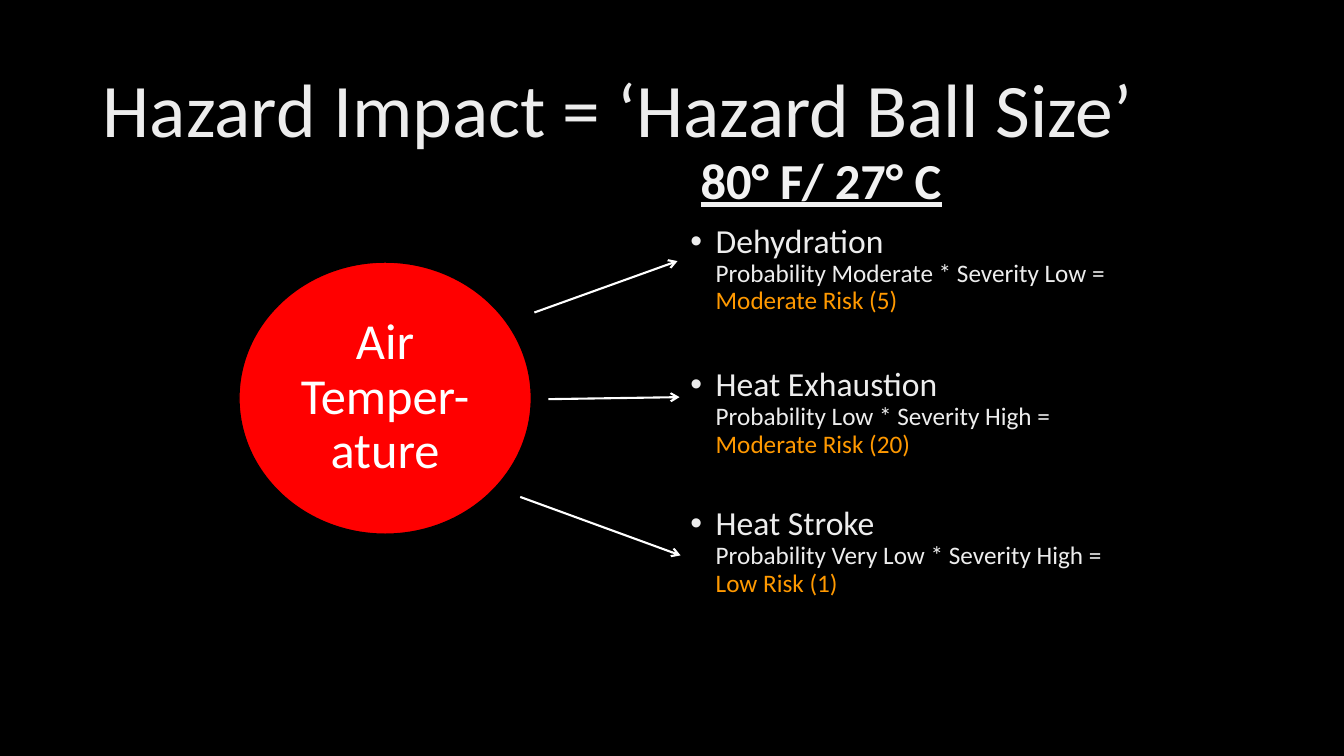
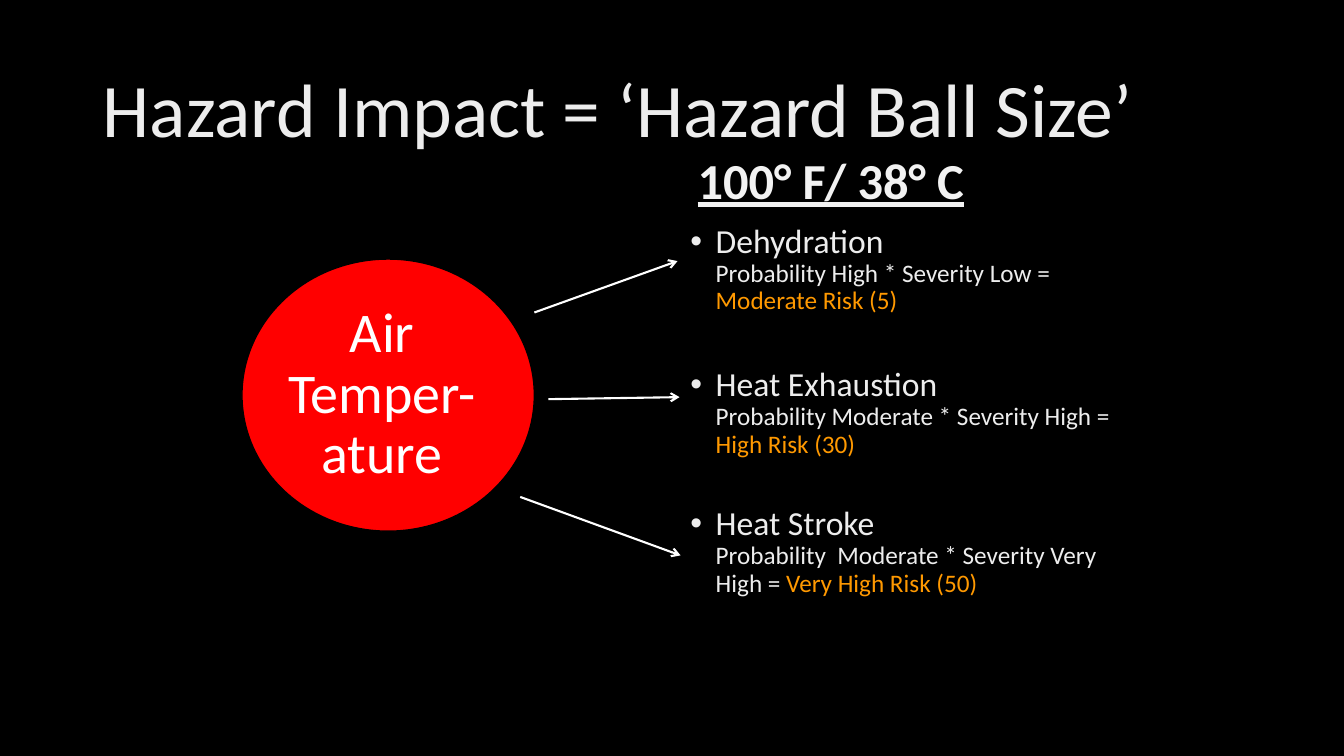
from lxml import etree
from pptx import Presentation
from pptx.dml.color import RGBColor
from pptx.enum import shapes, text
from pptx.oxml import ns
from pptx.util import Inches, Pt

FONT = "Calibri"
BLACK = RGBColor(0x00, 0x00, 0x00)
WHITE = RGBColor(0xFF, 0xFF, 0xFF)
SILVER = RGBColor(0xED, 0xED, 0xED)
PALE = RGBColor(0xF2, 0xF2, 0xF2)
RED = RGBColor(0xFF, 0x00, 0x00)
ORANGE = RGBColor(0xFF, 0x99, 0x00)

TITLE = "Hazard Impact = ‘Hazard Ball Size’"
HAZARDS = ("Dehydration", "Heat Exhaustion", "Heat Stroke")
HAZARD_GAPS = (0, 37.5, 34.5)
ARROWS = (
    ((5.3, 3.1), (6.72, 2.59)),
    ((5.44, 3.96), (6.74, 3.94)),
    ((5.16, 4.93), (6.75, 5.51)),
)
BALL_SIZE = (2.9, 2.7)
BALL_INSET = 0.07

SCENARIOS = (
    {
        "temperature": "80° F/ 27° C",
        "temperature_left": 6.85,
        "ball_at": (2.37, 2.6),
        "ball_text_size": 36,
        "ball_text_shift": 0,
        "risks": (
            ("Probability Moderate * Severity Low = ", "Moderate Risk (5)"),
            ("Probability Low * Severity High = ", "Moderate Risk (20)"),
            ("Probability Very Low * Severity High = ", "Low Risk (1)"),
        ),
    },
    {
        "temperature": "100° F/ 38° C",
        "temperature_left": 6.82,
        "ball_at": (2.4, 2.57),
        "ball_text_size": 40,
        "ball_text_shift": 0.06,
        "risks": (
            ("Probability High * Severity Low = ", "Moderate Risk (5)"),
            ("Probability Moderate * Severity High = ", "High Risk (30)"),
            ("Probability  Moderate * Severity Very High = ", "Very High Risk (50)"),
        ),
    },
)


def style(run, size, color):
    """Give a run the deck font, a size and a colour."""
    run.font.name = FONT
    run.font.size = Pt(size)
    run.font.color.rgb = color


def add_run(paragraph, words, size, color):
    """Append a styled run to a paragraph."""
    run = paragraph.add_run()
    run.text = words
    style(run, size, color)


def add_text_box(slide, left, top, width, height):
    """Add a wrapping text box and return its text frame."""
    frame = slide.shapes.add_textbox(*map(Inches, (left, top, width, height))).text_frame
    frame.word_wrap = True
    return frame


def set_title(slide):
    """Place and format the slide title."""
    title = slide.shapes.title
    title.left, title.top = Inches(0.92), Inches(0.4)
    title.width, title.height = Inches(11.5), Inches(1.45)
    frame = title.text_frame
    frame.text = TITLE
    frame.vertical_anchor = text.MSO_ANCHOR.MIDDLE
    heading = frame.paragraphs[0]
    heading.alignment = text.PP_ALIGN.LEFT
    heading.line_spacing = 0.9
    style(heading.runs[0], 54, SILVER)


def set_bullet(paragraph):
    """Give a paragraph a round bullet with a hanging indent."""
    properties = paragraph._p.get_or_add_pPr()
    properties.set("marL", str(Inches(0.25)))
    properties.set("indent", str(-Inches(0.25)))
    etree.SubElement(properties, ns.qn("a:buFont")).set("typeface", "Arial")
    etree.SubElement(properties, ns.qn("a:buChar")).set("char", "•")


def add_risks(slide, risks):
    """List each hazard with its rating and resulting risk."""
    frame = add_text_box(slide, 6.75, 2.18, 4.51, 4.87)
    for index, (hazard, gap, (rating, risk)) in enumerate(zip(HAZARDS, HAZARD_GAPS, risks)):
        entry = frame.add_paragraph() if index else frame.paragraphs[0]
        set_bullet(entry)
        entry.line_spacing = 0.9
        entry.space_before = Pt(gap)
        add_run(entry, hazard, 24, SILVER)
        entry.add_line_break()
        add_run(entry, rating, 18, SILVER)
        add_run(entry, risk, 18, ORANGE)


def add_arrow(slide, start, end):
    """Draw a white arrow between two points."""
    arrow = slide.shapes.add_connector(
        shapes.MSO_CONNECTOR.STRAIGHT, *map(Inches, (*start, *end)))
    arrow.line.color.rgb = WHITE
    arrow.line.width = Pt(1.5)
    outline = arrow.line._get_or_add_ln()
    etree.SubElement(outline, ns.qn("a:tailEnd")).set("type", "arrow")
    etree.SubElement(arrow._element.spPr, ns.qn("a:effectLst"))


def add_temperature(slide, temperature, left):
    """Write the underlined temperature heading."""
    heading = add_text_box(slide, left, 1.43, 4.82, 0.71).paragraphs[0]
    add_run(heading, temperature, 36, PALE)
    heading.runs[0].font.bold = True
    heading.runs[0].font.underline = True


def add_ball(slide, position, text_size, text_shift):
    """Draw the labelled hazard ball, its label shifted left as given."""
    ball = slide.shapes.add_shape(
        shapes.MSO_SHAPE.OVAL, *map(Inches, (*position, *BALL_SIZE)))
    ball.shadow.inherit = False
    ball.fill.solid()
    ball.fill.fore_color.rgb = RED
    ball.line.color.rgb = BLACK
    ball.line.width = Pt(1)
    frame = ball.text_frame
    frame.word_wrap = True
    frame.vertical_anchor = text.MSO_ANCHOR.MIDDLE
    frame.margin_top = frame.margin_bottom = Inches(BALL_INSET)
    frame.margin_left = Inches(BALL_INSET - text_shift)
    frame.margin_right = Inches(BALL_INSET + text_shift)
    label = frame.paragraphs[0]
    label.alignment = text.PP_ALIGN.CENTER
    label.line_spacing = 0.9
    add_run(label, "Air Temper-ature", text_size, WHITE)


def add_scenario(deck, scenario):
    """Build the slide for one air temperature."""
    slide = deck.slides.add_slide(deck.slide_layouts.get_by_name("Title Only"))
    set_title(slide)
    add_risks(slide, scenario["risks"])
    for start, end in ARROWS:
        add_arrow(slide, start, end)
    add_temperature(slide, scenario["temperature"], scenario["temperature_left"])
    add_ball(slide, scenario["ball_at"], scenario["ball_text_size"],
             scenario["ball_text_shift"])


def main():
    """Build and save the deck."""
    deck = Presentation()
    deck.slide_width, deck.slide_height = Inches(13.33), Inches(7.5)
    backdrop = deck.slide_master.background.fill
    backdrop.solid()
    backdrop.fore_color.rgb = BLACK
    for scenario in SCENARIOS:
        add_scenario(deck, scenario)
    deck.save("out.pptx")


if __name__ == "__main__":
    main()
